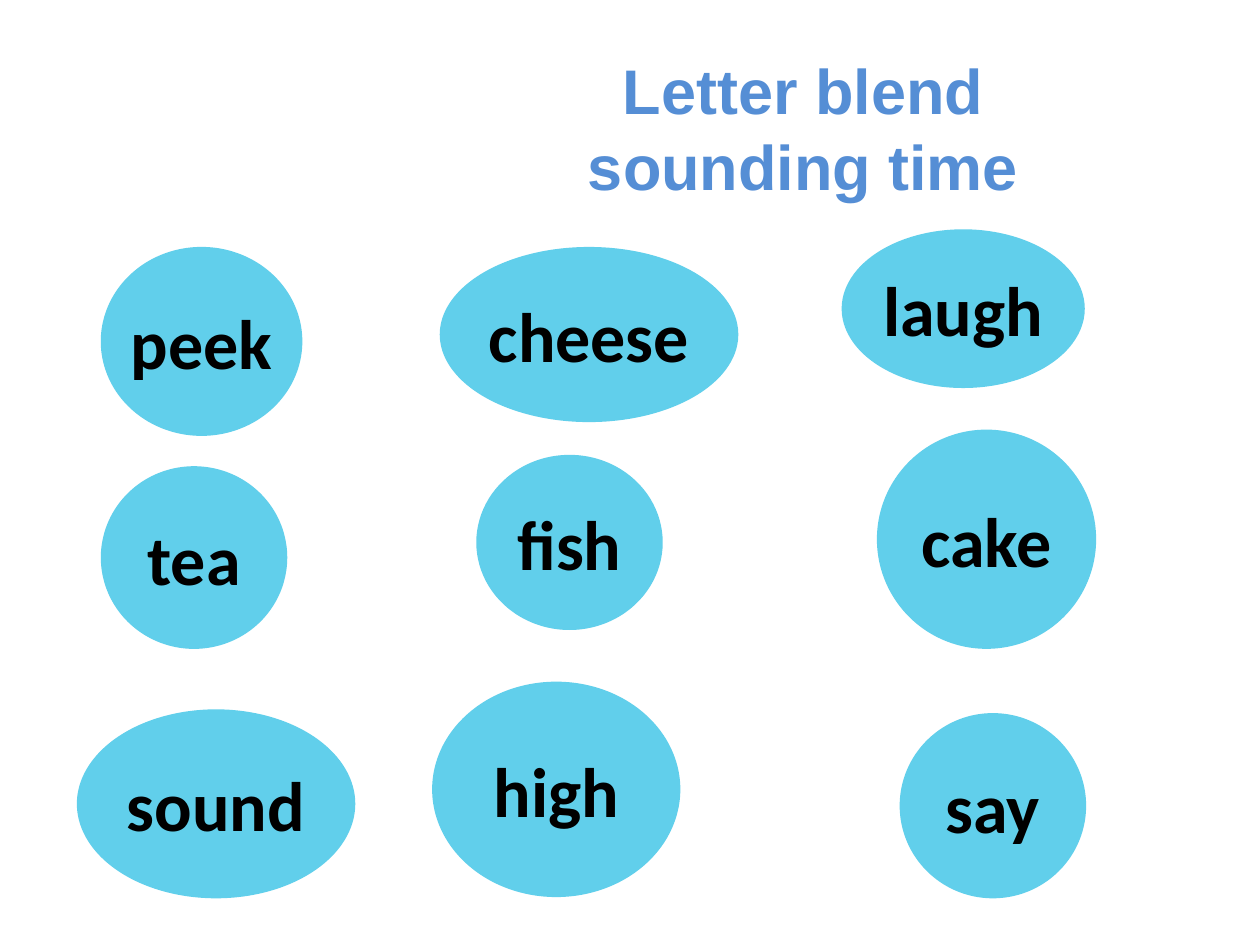
"""Build a slide of words in ovals for practising letter blends."""
from pptx import Presentation
from pptx import util as u
from pptx.dml.color import RGBColor
from pptx.enum import shapes, text

HUES = {"title": "558ED5", "oval": "61CFEB", "word": "000000"}
TITLE = ("Letter blend sounding time", (3.66, 0.36, 5.43, 1.31))
WORDS = [
    ("peek", (0.8, 1.96, 1.6, 1.5)),
    ("laugh", (6.68, 1.82, 1.93, 1.26)),
    ("cheese", (3.49, 1.96, 2.37, 1.39)),
    ("tea", (0.8, 3.7, 1.48, 1.45)),
    ("cake", (6.96, 3.41, 1.74, 1.74)),
    ("fish", (3.78, 3.61, 1.48, 1.39)),
    ("sound", (0.61, 5.63, 2.21, 1.5)),
    ("say", (7.14, 5.66, 1.48, 1.47)),
    ("high", (3.43, 5.41, 1.97, 1.71)),
]
FONTS = {
    "title": {"name": "Arial", "size": u.Pt(36), "bold": True},
    "word": {"name": "Calibri", "size": u.Pt(40), "bold": True},
}
FRAMES = {
    "title": {
        "word_wrap": True,
        "auto_size": text.MSO_AUTO_SIZE.NONE,
        "vertical_anchor": text.MSO_ANCHOR.TOP,
        "margin_left": u.Inches(0.2),
        "margin_right": u.Inches(0.2),
    },
    "word": {
        "word_wrap": False,
        "vertical_anchor": text.MSO_ANCHOR.MIDDLE,
        "margin_left": 0,
        "margin_right": 0,
        "margin_top": 0,
        "margin_bottom": 0,
    },
}


def style(item, values):
    for key, value in values.items():
        setattr(item, key, value)


def write(shape, words, kind):
    frame = shape.text_frame
    frame.text = words
    style(frame, FRAMES[kind])
    line = frame.paragraphs[0]
    line.alignment = text.PP_ALIGN.CENTER
    font = line.runs[0].font
    style(font, FONTS[kind])
    font.color.rgb = RGBColor.from_string(HUES[kind])


def main():
    deck = Presentation()
    style(deck, {"slide_width": u.Inches(10), "slide_height": u.Inches(7.5)})
    slide = deck.slides.add_slide(deck.slide_layouts[5])

    words, box = TITLE
    title = slide.shapes.title
    style(title, dict(zip(("left", "top", "width", "height"), map(u.Inches, box))))
    write(title, words, "title")

    for word, box in WORDS:
        oval = slide.shapes.add_shape(shapes.MSO_SHAPE.OVAL, *map(u.Inches, box))
        oval.shadow.inherit = False
        oval.fill.solid()
        oval.fill.fore_color.rgb = RGBColor.from_string(HUES["oval"])
        oval.line.fill.background()
        write(oval, word, "word")

    deck.save("out.pptx")


if __name__ == "__main__":
    main()
